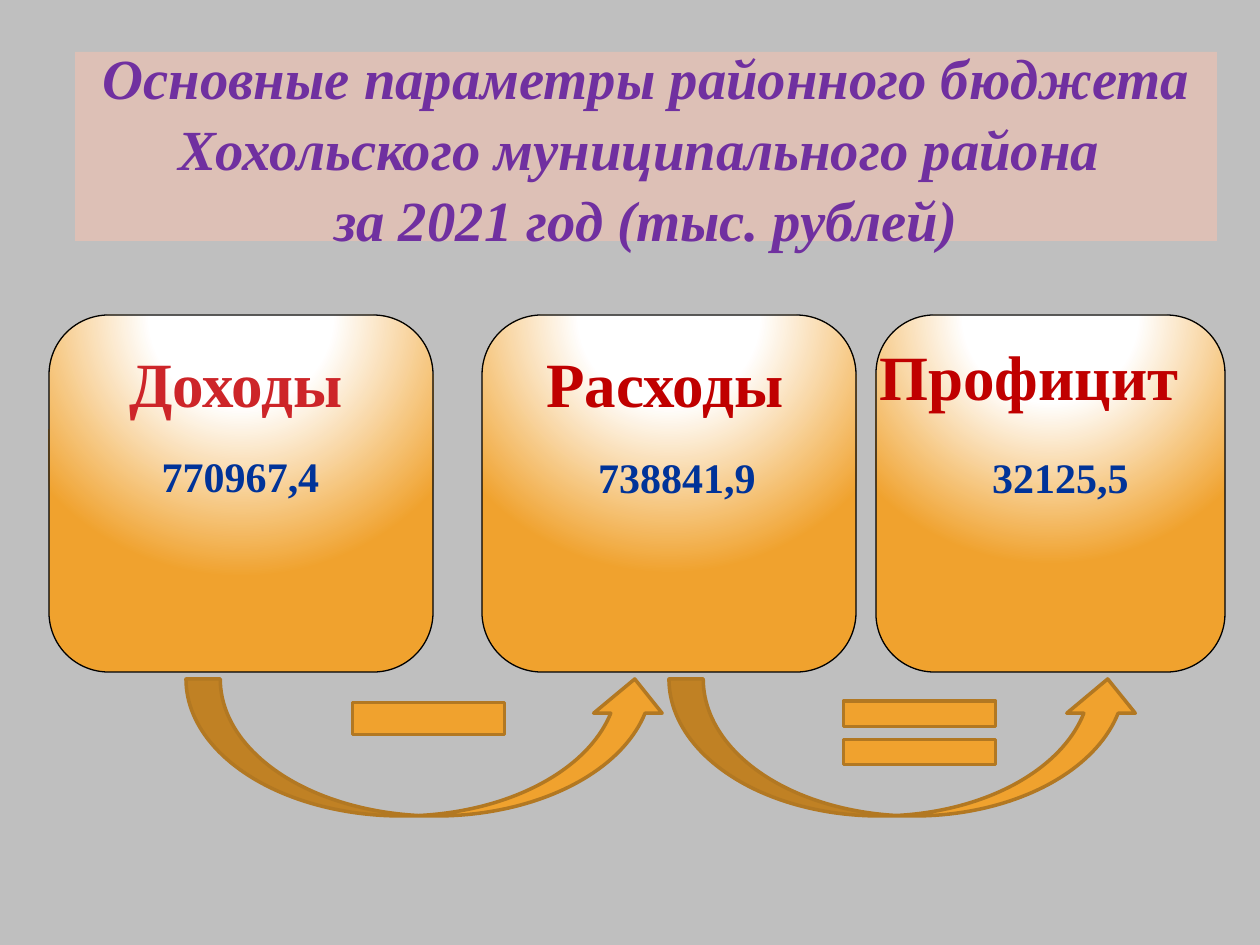
from lxml.etree import SubElement
from pptx import Presentation
from pptx.dml.color import RGBColor
from pptx.enum.shapes import MSO_SHAPE
from pptx.enum.text import MSO_ANCHOR, PP_ALIGN
from pptx.oxml.ns import qn
from pptx.util import Emu, Pt

PX = 914400 / 126
GREY = RGBColor(0xBF, 0xBF, 0xBF)
PINK = RGBColor(0xDD, 0xC0, 0xB6)
PURPLE = RGBColor(0x70, 0x30, 0xA0)
WHITE = RGBColor(0xFF, 0xFF, 0xFF)
BLACK = RGBColor(0x00, 0x00, 0x00)
ORANGE = RGBColor(0xF0, 0xA2, 0x2E)
BROWN = RGBColor(0xB2, 0x78, 0x22)
RED = RGBColor(0xCD, 0x25, 0x29)
DARK_RED = RGBColor(0xC0, 0x00, 0x00)
BLUE = RGBColor(0x00, 0x33, 0x99)

deck = Presentation()
deck.slide_width, deck.slide_height = Emu(int(1260 * PX)), Emu(int(945 * PX))
page = deck.slides.add_slide(deck.slide_layouts[6])
page.background.fill.solid()
page.background.fill.fore_color.rgb = GREY


def add_figure(kind, place, fill, line=None, line_width=0.75):
    figure = page.shapes.add_shape(kind, *[Emu(int(n * PX)) for n in place])
    figure.shadow.inherit = False
    figure.fill.solid()
    figure.fill.fore_color.rgb = fill
    if line is None:
        figure.line.fill.background()
    else:
        figure.line.color.rgb = line
        figure.line.width = Pt(line_width)
    return figure


def write_lines(box, lines, color, formats, wrap=True):
    box.text_frame.word_wrap = wrap
    para = box.text_frame.paragraphs[0]
    para.alignment = PP_ALIGN.CENTER
    for number, line in enumerate(lines):
        if number:
            para.add_line_break()
        span = para.add_run()
        span.text = line
        span.font.color.rgb = color
        for name, value in formats.items():
            setattr(span.font, name, value)
    return para


# Title
title = add_figure(MSO_SHAPE.RECTANGLE, (75, 52, 1142, 189), PINK)
title.text_frame.vertical_anchor = MSO_ANCHOR.MIDDLE
title_format = {"name": "Times New Roman", "size": Pt(32.4), "bold": True, "italic": True}
title_lines = ["Основные параметры районного бюджета Хохольского муниципального района ",
               "за 2021 год (тыс. рублей)"]
title_para = write_lines(title, title_lines, PURPLE, title_format)
title_para.line_spacing = 1.04

# Cards with a glow from above
for left, width in [(49, 384), (482, 374), (876, 349)]:
    card = add_figure(MSO_SHAPE.ROUNDED_RECTANGLE, (left, 315, width, 357), ORANGE, BLACK)
    card.adjustments[0] = 0.167
    properties = card.fill._xPr
    solid = properties.find(qn("a:solidFill"))
    glow = SubElement(properties, qn("a:gradFill"), rotWithShape="1")
    properties.replace(solid, glow)
    stops = SubElement(glow, qn("a:gsLst"))
    for position, color in [(0, WHITE), (35, WHITE), (100, ORANGE)]:
        stop = SubElement(stops, qn("a:gs"), pos=str(position * 1000))
        SubElement(stop, qn("a:srgbClr"), val=str(color))
    circle = SubElement(glow, qn("a:path"), path="circle")
    SubElement(circle, qn("a:fillToRect"), l="50000", t="-80000", r="50000", b="180000")

# Headings and amounts
heading_format = {"name": "Times New Roman", "size": Pt(36), "bold": True}
amount_format = {"name": "Times New Roman", "size": Pt(24), "bold": True}
texts = [
    ("Доходы", (59, 338, 354, 89), RED, heading_format, True),
    ("Расходы", (493, 338, 344, 89), DARK_RED, heading_format, True),
    ("Профицит", (857, 331, 344, 89), DARK_RED, heading_format, True),
    ("770967,4", (78, 444, 325, 132), BLUE, amount_format, False),
    ("738841,9", (507, 445, 340, 131), BLUE, amount_format, False),
    ("32125,5", (940, 445, 241, 142), BLUE, amount_format, False),
]
for text, place, color, formats, wrap in texts:
    box = page.shapes.add_textbox(*[Emu(int(n * PX)) for n in place])
    write_lines(box, [text], color, formats, wrap)

# Arrows and arithmetic signs
for kind, place in [
    (MSO_SHAPE.CURVED_UP_ARROW, (186, 679, 483, 137)),
    (MSO_SHAPE.CURVED_UP_ARROW, (669, 679, 473, 137)),
    (MSO_SHAPE.MATH_MINUS, (325, 650, 207, 137)),
    (MSO_SHAPE.MATH_EQUAL, (816, 679, 207, 108)),
]:
    add_figure(kind, place, ORANGE, BROWN, 2)

deck.save("out.pptx")
